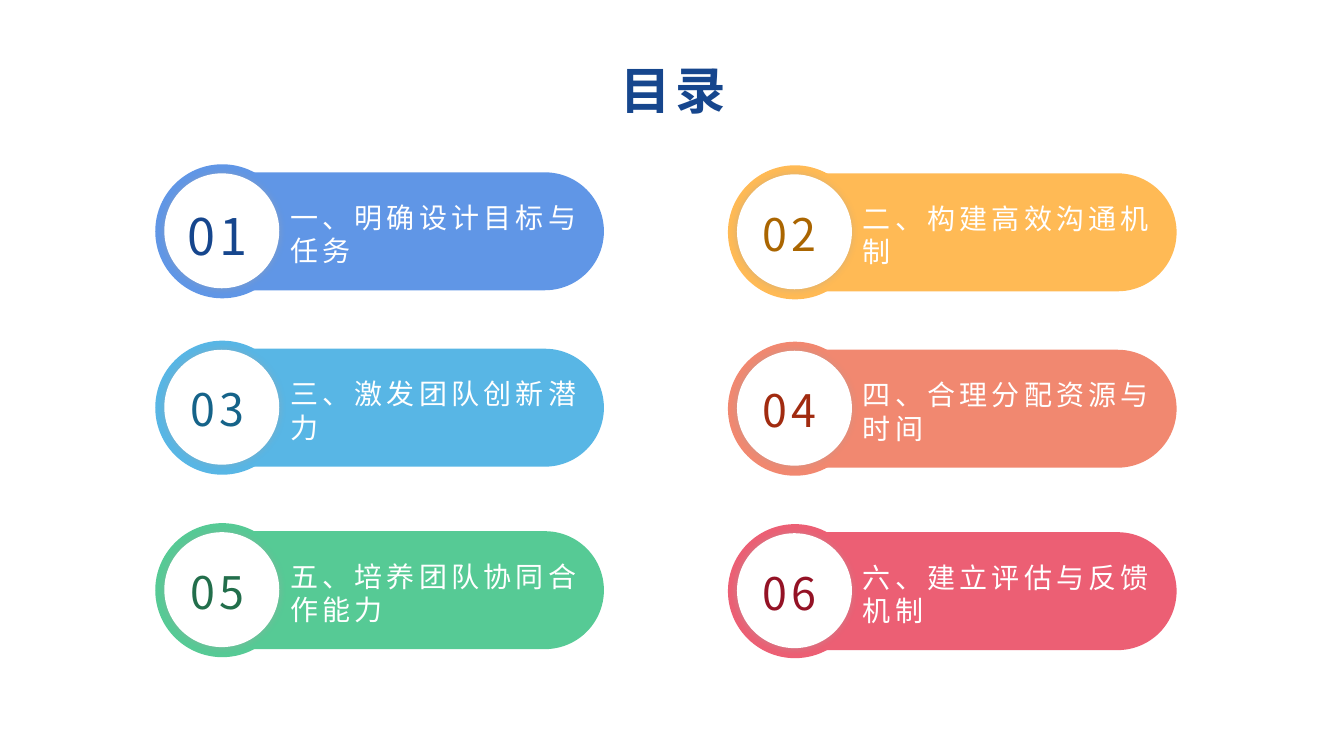
from lxml import etree
from pptx import Presentation
from pptx import util as u
from pptx.dml.color import RGBColor
from pptx.enum import shapes, text
from pptx.oxml.ns import qn

FONT = "Noto Sans CJK SC"
NAVY, WHITE = "16468D", "FFFFFF"
COLUMN_LEFTS = (1.54, 7.22)
ROW_TOPS = (1.63, 3.38, 5.19)
COLUMN_DROP = 0.01
ENTRIES = [
    ("一、明确设计目标与任务", "6096E6", NAVY, 36),
    ("二、构建高效沟通机制", "FFBA55", "AA6500", 32),
    ("三、激发团队创新潜力", "58B6E5", "156389", 32),
    ("四、合理分配资源与时间", "F18870", "A12B10", 32),
    ("五、培养团队协同合作能力", "56CA95", "226E4B", 32),
    ("六、建立评估与反馈机制", "EC5F74", "941225", 32),
]


def color(value):
    return RGBColor.from_string(value)


def inches(*lengths):
    return [u.Inches(length) for length in lengths]


def add_filled(slide, kind, box, fill):
    shape = slide.shapes.add_shape(kind, *inches(*box))
    shape.shadow.inherit = False
    shape.fill.solid()
    shape.fill.fore_color.rgb = color(fill)
    shape.line.fill.background()
    return shape


def add_glow(shape):
    """Give the shape a soft grey shadow on all sides."""
    effects = shape._element.spPr.find(qn("a:effectLst"))
    shadow = etree.SubElement(effects, qn("a:outerShdw"), blurRad=str(u.Pt(5)),
                              dist="0", algn="ctr", rotWithShape="0")
    tint = etree.SubElement(shadow, qn("a:srgbClr"), val="A6A6A6")
    etree.SubElement(tint, qn("a:alpha"), val="40000")


def write(shape, words, size, fill, align, anchor, bold=False):
    frame = shape.text_frame
    frame.word_wrap = True
    frame.auto_size = text.MSO_AUTO_SIZE.NONE
    frame.vertical_anchor = anchor
    frame.margin_left, frame.margin_top, frame.margin_right, frame.margin_bottom = inches(
        0.1, 0.05, 0.1, 0)
    paragraph = frame.paragraphs[0]
    paragraph.alignment = align
    run = paragraph.add_run()
    run.text = words
    run.font.size = u.Pt(size)
    run.font.bold = bold
    run.font.color.rgb = color(fill)
    run.font.name = FONT
    properties = run._r.get_or_add_rPr()
    properties.set("spc", "300")
    etree.SubElement(properties, qn("a:ea"), typeface=FONT)


def add_title(slide, box):
    title = slide.shapes.title
    title.left, title.top, title.width, title.height = inches(*box)
    write(title, "目录", 36, NAVY, text.PP_ALIGN.CENTER, text.MSO_ANCHOR.TOP, bold=True)


def add_entry(slide, left, top, number, entry):
    words, fill, number_color, number_size = entry
    kinds = shapes.MSO_SHAPE
    pill = add_filled(slide, kinds.ROUNDED_RECTANGLE, (left + 0.34, top + 0.08, 4.11, 1.17), fill)
    pill.adjustments[0] = 0.5
    add_filled(slide, kinds.OVAL, (left, top, 1.33, 1.33), fill)
    add_glow(add_filled(slide, kinds.OVAL, (left + 0.09, top + 0.09, 1.14, 1.14), WHITE))
    number_box = slide.shapes.add_textbox(*inches(left, top + 0.36, 1.23, 0.63))
    write(number_box, f"{number:02}", number_size, number_color,
          text.PP_ALIGN.CENTER, text.MSO_ANCHOR.TOP)
    label = slide.shapes.add_textbox(*inches(left + 1.24, top + 0.08, 3.21, 1.17))
    write(label, words, 20, WHITE, text.PP_ALIGN.LEFT, text.MSO_ANCHOR.MIDDLE)


def main():
    presentation = Presentation()
    presentation.slide_width, presentation.slide_height = inches(13.33, 7.5)
    slide = presentation.slides.add_slide(presentation.slide_layouts[5])
    add_title(slide, (4.4, 0.54, 4.56, 0.66))
    for index, entry in enumerate(ENTRIES):
        row, column = divmod(index, len(COLUMN_LEFTS))
        add_entry(slide, COLUMN_LEFTS[column], ROW_TOPS[row] + column * COLUMN_DROP,
                  index + 1, entry)
    presentation.save("out.pptx")


if __name__ == "__main__":
    main()
